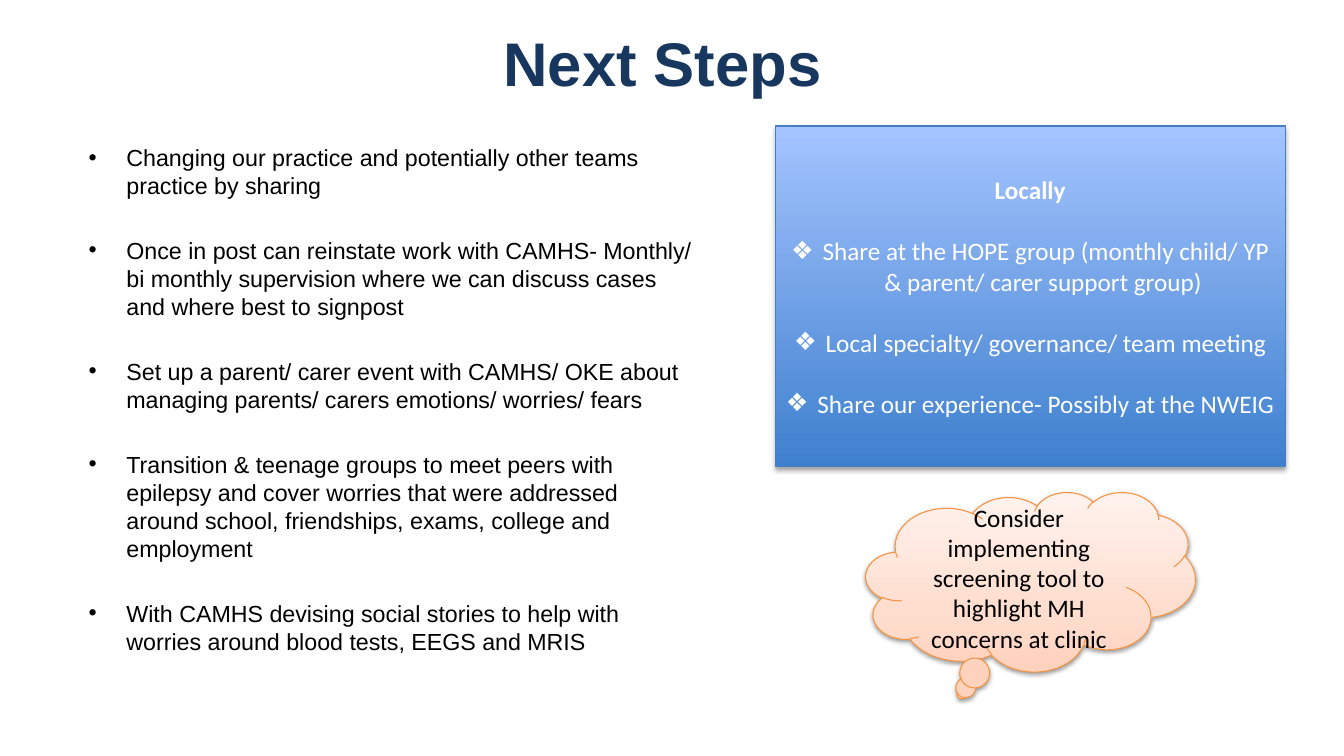
from lxml.etree import SubElement
from pptx import Presentation
from pptx.dml.color import RGBColor
from pptx.enum.shapes import MSO_SHAPE
from pptx.enum.text import MSO_ANCHOR, PP_ALIGN
from pptx.oxml.ns import qn
from pptx.util import Pt

STEPS = [
    "Changing our practice and potentially other teams practice by sharing",
    "Once in post can reinstate work with CAMHS- Monthly/ bi monthly supervision "
    "where we can discuss cases and where best to signpost",
    "Set up a parent/ carer event with CAMHS/ OKE about managing parents/ carers "
    "emotions/ worries/ fears",
    "Transition & teenage groups to meet peers with epilepsy and cover worries that "
    "were addressed around school, friendships, exams, college and employment",
    "With CAMHS devising social stories to help with worries around blood tests, "
    "EEGS and MRIS",
]
LOCAL_PLANS = [
    "Share at the HOPE group (monthly child/ YP & parent/ carer support group) ",
    "Local specialty/ governance/ team meeting",
    "Share our experience- Possibly at the NWEIG",
]


def color(hex_code):
    """Turn a hex string into a colour."""
    return RGBColor.from_string(hex_code)


def add_run(paragraph, wording, font, size, ink, bold=False):
    """Add one formatted run."""
    run = paragraph.add_run()
    run.text = wording
    run.font.name = font
    run.font.size = Pt(size)
    run.font.bold = bold
    run.font.color.rgb = color(ink)


def add_bullet(paragraph, mark, indent):
    """Give a paragraph a hanging bullet."""
    properties = paragraph._p.get_or_add_pPr()
    properties.set("marL", str(Pt(indent)))
    properties.set("indent", str(-Pt(indent)))
    SubElement(properties, qn("a:buFont"), typeface="Arial")
    SubElement(properties, qn("a:buChar"), char=mark)


def add_panel(slide, outline, box, stops, edge, shadow_opacity, shadow_distance):
    """Add a shape with an upward gradient and a soft shadow, and return its text frame."""
    panel = slide.shapes.add_shape(outline, *map(Pt, box))
    panel.fill.gradient()
    panel.fill.gradient_angle = 90
    properties = panel._element.spPr
    stop_list = properties.find(qn("a:gradFill")).find(qn("a:gsLst"))
    for stop in list(stop_list):
        stop_list.remove(stop)
    for position, shade in stops:
        stop = SubElement(stop_list, qn("a:gs"), pos=str(position * 1000))
        SubElement(stop, qn("a:srgbClr"), val=shade)
    panel.line.color.rgb = color(edge)
    panel.line.width = Pt(0.75)
    panel.shadow.inherit = False
    shadow = SubElement(
        properties.find(qn("a:effectLst")), qn("a:outerShdw"),
        blurRad=str(Pt(3.1)), dist=str(Pt(shadow_distance)), dir="5400000", rotWithShape="0",
    )
    black = SubElement(shadow, qn("a:srgbClr"), val="000000")
    SubElement(black, qn("a:alpha"), val=str(shadow_opacity * 1000))
    frame = panel.text_frame
    frame.word_wrap = True
    frame.vertical_anchor = MSO_ANCHOR.MIDDLE
    return frame


def place_title(slide, box):
    """Place the slide title."""
    title = slide.shapes.title
    title.left, title.top, title.width, title.height = map(Pt, box)
    title.text_frame.vertical_anchor = MSO_ANCHOR.MIDDLE
    heading = title.text_frame.paragraphs[0]
    heading.alignment = PP_ALIGN.CENTER
    add_run(heading, "Next Steps ", "Arial", 44, "17375E", True)


def place_steps(slide, box):
    """Place the bulleted list of steps."""
    frame = slide.shapes.add_textbox(*map(Pt, box)).text_frame
    frame.word_wrap = True
    for number, step in enumerate(STEPS):
        paragraph = frame.add_paragraph() if number else frame.paragraphs[0]
        paragraph.line_spacing = Pt(20)
        if number:
            paragraph.space_before = Pt(26.4)
        add_bullet(paragraph, "•", 27)
        add_run(paragraph, step, "Arial", 16.6, "000000")


def place_local_plans(slide, box):
    """Place the blue panel of local plans."""
    frame = add_panel(slide, MSO_SHAPE.RECTANGLE, box,
                      [(0, "3F80CE"), (100, "A4C4FF")], "4B7EBC", 35, 1.8)
    heading = frame.paragraphs[0]
    heading.alignment = PP_ALIGN.CENTER
    add_run(heading, "Locally", "Calibri", 18, "FFFFFF", True)
    for plan in LOCAL_PLANS:
        paragraph = frame.add_paragraph()
        paragraph.alignment = PP_ALIGN.CENTER
        paragraph.space_before = Pt(22)
        add_bullet(paragraph, "❖", 22.5)
        add_run(paragraph, plan, "Calibri", 18, "FFFFFF")


def place_thought(slide, box):
    """Place the thought cloud."""
    frame = add_panel(slide, MSO_SHAPE.CLOUD_CALLOUT, box,
                      [(0, "FFD2BD"), (35, "FFDED0"), (100, "FFF2ED")], "F69240", 38, 1.6)
    thought = frame.paragraphs[0]
    thought.alignment = PP_ALIGN.CENTER
    add_run(thought, "Consider implementing screening tool to highlight MH concerns at clinic",
            "Calibri", 18, "000000")


def main():
    """Build and save the slide."""
    deck = Presentation()
    deck.slide_width, deck.slide_height = Pt(960), Pt(540)
    slide = deck.slides.add_slide(deck.slide_layouts[5])
    place_title(slide, (144.7, 15.8, 669.6, 56.9))
    place_steps(slide, (56.2, 98.6, 447.8, 373.7))
    place_local_plans(slide, (553.7, 90, 364.3, 243.4))
    place_thought(slide, (618.5, 351.4, 235.4, 128.2))
    deck.save("out.pptx")


if __name__ == "__main__":
    main()
